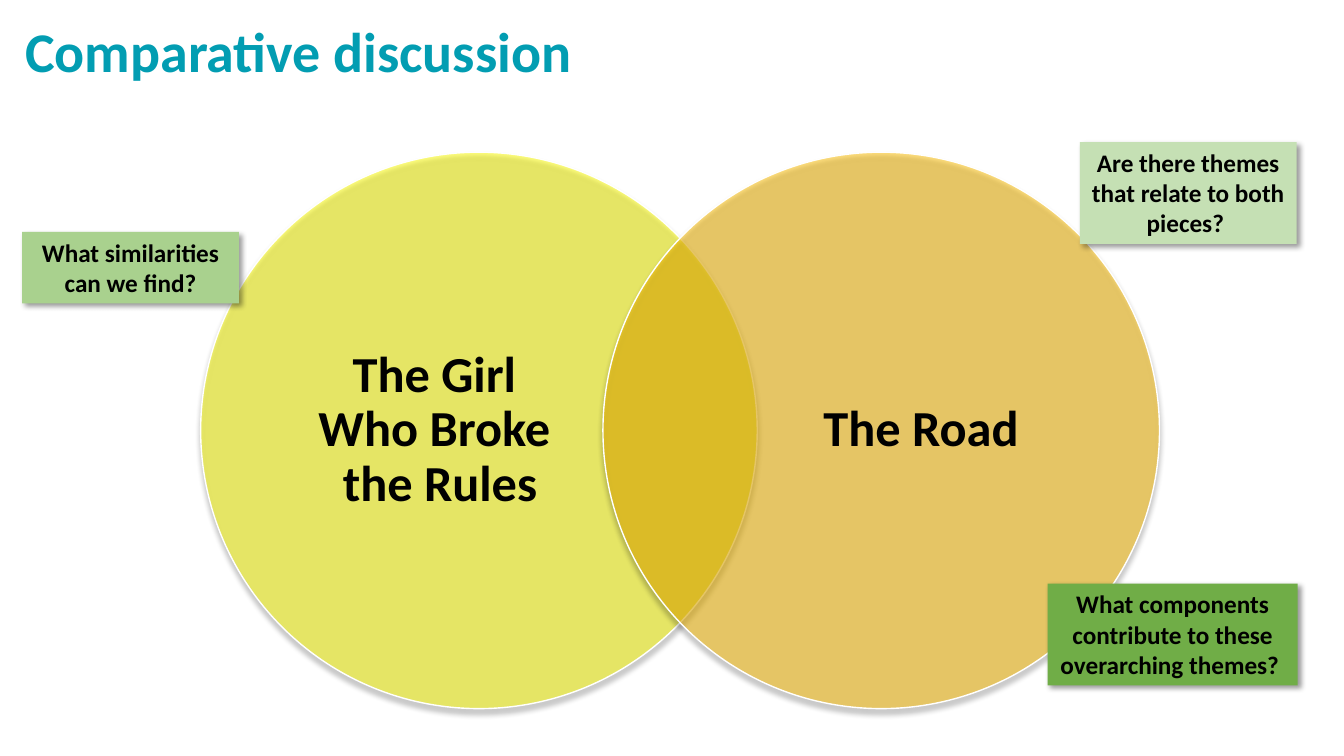
"""Build the comparative discussion slide with a two-circle Venn diagram."""
from dataclasses import dataclass

from lxml.etree import SubElement
from pptx import Presentation
from pptx.dml.color import RGBColor
from pptx.enum.shapes import MSO_SHAPE
from pptx.enum.text import MSO_ANCHOR, MSO_AUTO_SIZE, PP_ALIGN
from pptx.oxml.ns import qn
from pptx.util import Pt

TITLE = "Comparative discussion"
CIRCLES = [
    {"label": "The Girl \vWho Broke \vthe Rules", "left": 199, "label_left": 277, "fill": "FFFF00"},
    {"label": "The Road", "left": 598, "label_left": 754, "fill": "FFC000"},
]
NOTES = [
    {"text": "Are there themes that relate to both pieces? ", "area": (1071, 141, 215, 101), "fill": "C5E0B4"},
    {"text": "What similarities can we find?", "area": (22, 230, 215, 71), "fill": "A9D18E"},
    {"text": "What components contribute to these overarching themes? ", "area": (1039, 579, 248, 101), "fill": "70AD47"},
]

EMU_PER_PX = 9144
SLIDE_SIZE = (1333, 750)
TITLE_AREA = (15, -56, 589, 145)
CIRCLE_TOP, DIAMETER = 151, 552
LABEL_WIDTH, LABEL_HEIGHT = 319, 422


@dataclass(frozen=True)
class Theme:
    """Hold the colours and type sizes of the slide."""

    font: str = "Calibri"
    title: str = "029DB2"
    text: str = "000000"
    outline: str = "FFFFFF"
    shadow: str = "000000"
    title_size: int = 40
    label_size: int = 36
    note_size: int = 18


THEME = Theme()


def scaled(*lengths):
    """Turn px lengths into EMU."""
    return [length * EMU_PER_PX for length in lengths]


def write(shape, text, size, color, align, anchor, spacing=1.0):
    """Put one formatted bold paragraph into a shape."""
    frame = shape.text_frame
    frame.word_wrap = True
    frame.vertical_anchor = anchor
    para = frame.paragraphs[0]
    para.text = text
    para.alignment = align
    para.line_spacing = spacing
    for span in para.runs:
        span.font.name = THEME.font
        span.font.size = Pt(size)
        span.font.bold = True
        span.font.color.rgb = RGBColor.from_string(color)


def paint(shape, color):
    """Give a shape a solid fill."""
    shape.fill.solid()
    shape.fill.fore_color.rgb = RGBColor.from_string(color)


def add_opacity(color_element, percent):
    """Make a colour partly transparent."""
    SubElement(color_element, qn("a:alpha"), val=str(percent * 1000))


def cast_shadow(shape, degrees):
    """Add a soft shadow falling in the given direction."""
    shape.shadow.inherit = False
    effects = shape._element.spPr.find(qn("a:effectLst"))
    outer = SubElement(effects, qn("a:outerShdw"), blurRad=str(Pt(4)), dist=str(Pt(3)),
                       dir=str(degrees * 60000), algn="tl", rotWithShape="0")
    add_opacity(SubElement(outer, qn("a:srgbClr"), val=THEME.shadow), 40)


def add_circle(venn, circle):
    """Draw one translucent circle and its label."""
    disc = venn.shapes.add_shape(
        MSO_SHAPE.OVAL, *scaled(circle["left"], CIRCLE_TOP, DIAMETER, DIAMETER))
    paint(disc, circle["fill"])
    add_opacity(disc._element.spPr.find(qn("a:solidFill"))[0], 50)
    disc.line.color.rgb = RGBColor.from_string(THEME.outline)
    disc.line.width = Pt(1)
    cast_shadow(disc, 90)

    label_top = CIRCLE_TOP + (DIAMETER - LABEL_HEIGHT) // 2
    label = venn.shapes.add_textbox(
        *scaled(circle["label_left"], label_top, LABEL_WIDTH, LABEL_HEIGHT))
    frame = label.text_frame
    frame.margin_left = frame.margin_right = frame.margin_top = frame.margin_bottom = 0
    write(label, circle["label"], THEME.label_size, THEME.text,
          PP_ALIGN.CENTER, MSO_ANCHOR.MIDDLE, 0.9)


def add_note(page, note):
    """Draw one question card."""
    card = page.shapes.add_shape(MSO_SHAPE.RECTANGLE, *scaled(*note["area"]))
    paint(card, note["fill"])
    card.line.fill.background()
    cast_shadow(card, 45)
    write(card, note["text"], THEME.note_size, THEME.text, PP_ALIGN.CENTER, MSO_ANCHOR.TOP)
    card.text_frame.auto_size = MSO_AUTO_SIZE.SHAPE_TO_FIT_TEXT


def main():
    """Build and save the deck."""
    deck = Presentation()
    deck.slide_width, deck.slide_height = scaled(*SLIDE_SIZE)
    page = deck.slides.add_slide(deck.slide_layouts[5])

    title = page.shapes.title
    title.left, title.top, title.width, title.height = scaled(*TITLE_AREA)
    write(title, TITLE, THEME.title_size, THEME.title, PP_ALIGN.LEFT, MSO_ANCHOR.BOTTOM, 0.9)
    title.text_frame.auto_size = MSO_AUTO_SIZE.NONE

    venn = page.shapes.add_group_shape()
    for circle in CIRCLES:
        add_circle(venn, circle)
    for note in NOTES:
        add_note(page, note)

    deck.save("out.pptx")


if __name__ == "__main__":
    main()
